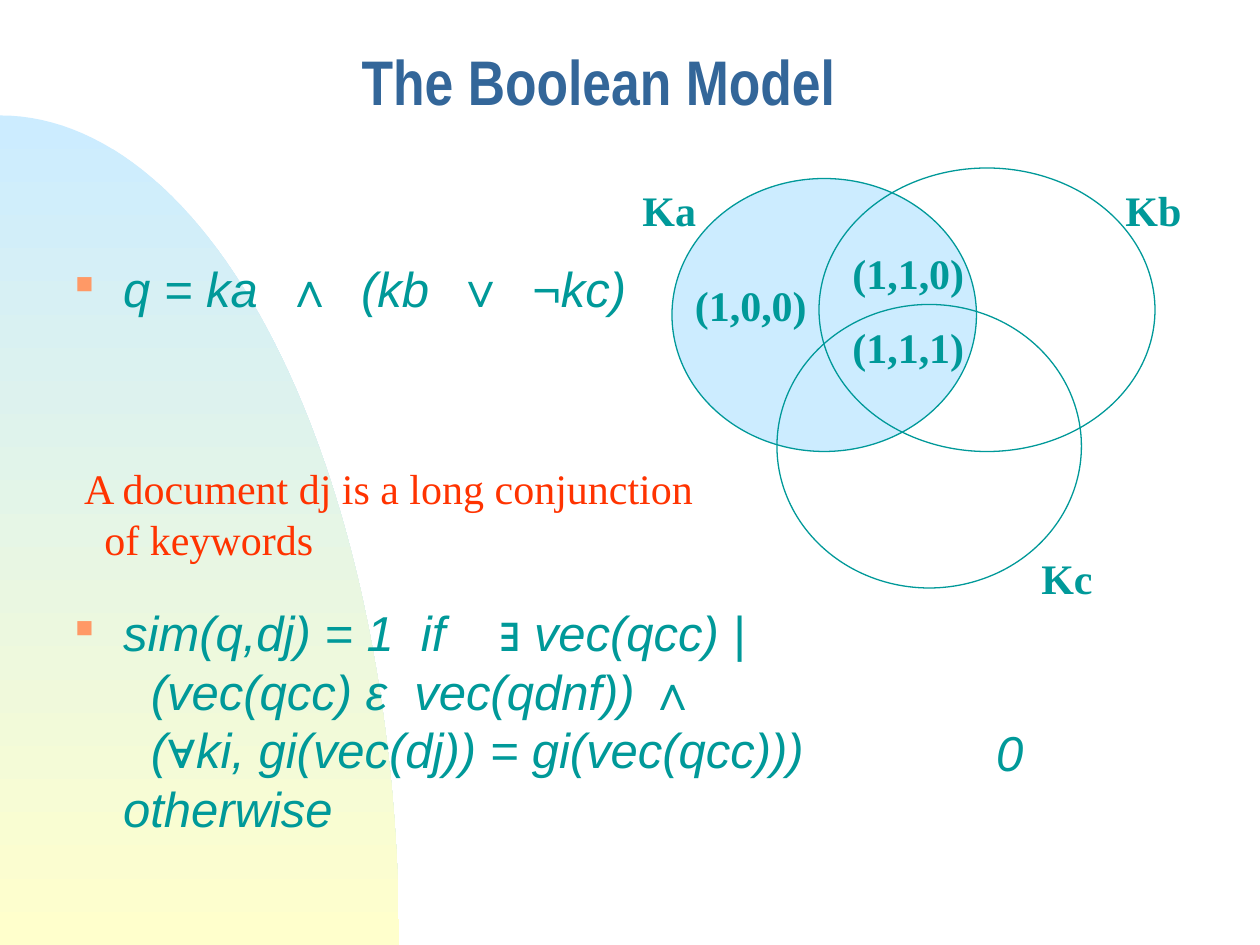
import math
from dataclasses import dataclass

from lxml import etree
from pptx import Presentation, util as u
from pptx.dml.color import RGBColor
from pptx.enum import shapes, text
from pptx.oxml.ns import qn

COLS, ROWS = 120, 90  # the slide grid, 12 cells to the inch
CELL = u.Inches(10) // COLS
TEAL, SKY, CREAM, RED = "009999", "CCECFF", "FFFFCC", "FF3300"
MATH = dict(name="Arial", size=u.Pt(28), italic=True)
LABEL = dict(name="Times New Roman", size=u.Pt(24), bold=True)
NOTE = dict(name="Times New Roman", size=u.Pt(24))
SIGNS = "∧∨"  # stand upright among italic words


@dataclass
class Ring:
    col: float
    row: float
    wide: float
    high: float
    fill: str = ""


@dataclass
class Tag:
    words: str
    col: float
    row: float
    wide: float = 13.2


@dataclass
class Line:
    words: str
    left: float = 0.38
    bullet: bool = False
    before: float = 0


RINGS = [Ring(64, 17, 29, 26, SKY), Ring(74, 29, 29, 27), Ring(78, 16, 32, 27)]
TAGS = [
    Tag("(1,1,1)", 80, 30), Tag("(1,0,0)", 65, 26), Tag("(1,1,0)", 80, 23),
    Tag("Ka", 60, 17, 7.6), Tag("Kb", 106, 17, 7.8), Tag("Kc", 98, 52, 7.4),
]
LOGIC = [
    Line("q = ka  ∧  (kb  ∨  ¬kc)", bullet=True),
    Line("sim(q,dj) = 1  if    ∃ vec(qcc) |", bullet=True, before=163),
    Line("(vec(qcc) ε  vec(qdnf)) ∧", left=0.6),
    Line("(∀ki, gi(vec(dj)) = gi(vec(qcc)))", left=0.6),
    Line("otherwise"),
]
ZERO = [Line("0", left=0)]
REDS = [Line("A document dj is a long conjunction", left=0),
        Line("of keywords", left=0.16)]


def hue(code: str) -> RGBColor:
    return RGBColor.from_string(code)


def cells(*counts: float) -> list:
    return [u.Emu(round(n * CELL)) for n in counts]


def style(font, looks: dict, color: str) -> None:
    for key, value in looks.items():
        setattr(font, key, value)
    font.color.rgb = hue(color)


def indent(par, line: Line) -> None:
    props = par._p.get_or_add_pPr()
    props.set("marL", str(u.Inches(line.left)))
    props.set("indent", str(u.Inches(-0.38 if line.bullet else 0)))
    if line.bullet:
        tint = etree.SubElement(props, qn("a:buClr"))
        etree.SubElement(tint, qn("a:srgbClr"), val="FF9966")
        etree.SubElement(props, qn("a:buSzPct"), val="50000")
        etree.SubElement(props, qn("a:buChar"), char="■")


def split(words: str) -> list:
    for sign in SIGNS:
        words = words.replace(sign, f"\n{sign}\n")
    return [part for part in words.split("\n") if part]


def write(slide, lines: list, place: tuple, looks: dict, color: str, wrap=False) -> None:
    frame = slide.shapes.add_textbox(*cells(*place)).text_frame
    frame.word_wrap = wrap
    if not wrap:
        frame.auto_size = text.MSO_AUTO_SIZE.SHAPE_TO_FIT_TEXT
    for i, line in enumerate(lines):
        par = frame.paragraphs[0] if i == 0 else frame.add_paragraph()
        par.space_before = u.Pt(line.before)
        indent(par, line)
        for part in split(line.words):
            run = par.add_run()
            run.text = part
            style(run.font, looks, color)
            if part in SIGNS:
                run.font.italic = False


def dome(slide) -> None:
    wide, high, steps = 38, 79, 60
    turns = [math.pi / 2 * i / steps for i in range(steps + 1)]
    curve = [cells(wide * math.sin(t), ROWS - high * math.cos(t)) for t in turns]
    pen = slide.shapes.build_freeform(*curve[0])
    pen.add_line_segments(curve[1:] + [cells(0, ROWS)], close=True)
    shape = pen.convert_to_shape()
    shape.shadow.inherit = False
    shape.line.fill.background()
    shape.fill.gradient()
    shape.fill.gradient_angle = 270
    for stop, code in zip(shape.fill.gradient_stops, (SKY, CREAM)):
        stop.color.rgb = hue(code)


def draw(slide, ring: Ring) -> None:
    place = cells(ring.col, ring.row, ring.wide, ring.high)
    oval = slide.shapes.add_shape(shapes.MSO_SHAPE.OVAL, *place)
    oval.shadow.inherit = False
    if ring.fill:
        oval.fill.solid()
        oval.fill.fore_color.rgb = hue(ring.fill)
    else:
        oval.fill.background()
    oval.line.color.rgb = hue(TEAL)
    oval.line.width = u.Pt(0.75)


def head(slide, words: str) -> None:
    title = slide.shapes.title
    title.left, title.top, title.width, title.height = cells(12, 4, 90, 9)
    frame = title.text_frame
    frame.text = words
    frame.vertical_anchor = text.MSO_ANCHOR.MIDDLE
    par = frame.paragraphs[0]
    par.alignment = text.PP_ALIGN.CENTER
    par.line_spacing = 0.7
    style(par.runs[0].font, dict(name="Arial Narrow", size=u.Pt(36), bold=True), "336699")


def main() -> None:
    deck = Presentation()
    deck.slide_width, deck.slide_height = cells(COLS, ROWS)
    slide = deck.slides.add_slide(deck.slide_layouts[5])

    # Backdrop, title and formulas
    dome(slide)
    head(slide, "The Boolean Model")
    write(slide, LOGIC, (6, 24, 114, 21), MATH, TEAL, wrap=True)
    write(slide, ZERO, (93.7, 68.25, 6, 6), MATH, TEAL, wrap=True)

    # Venn diagram
    for ring in RINGS:
        draw(slide, ring)
    for tag in TAGS:
        place = (tag.col, tag.row, tag.wide, 6)
        write(slide, [Line(tag.words, left=0)], place, LABEL, TEAL)

    # Remark
    write(slide, REDS, (6.84, 43.5, 60.6, 10.8), NOTE, RED)
    deck.save("out.pptx")


if __name__ == "__main__":
    main()
